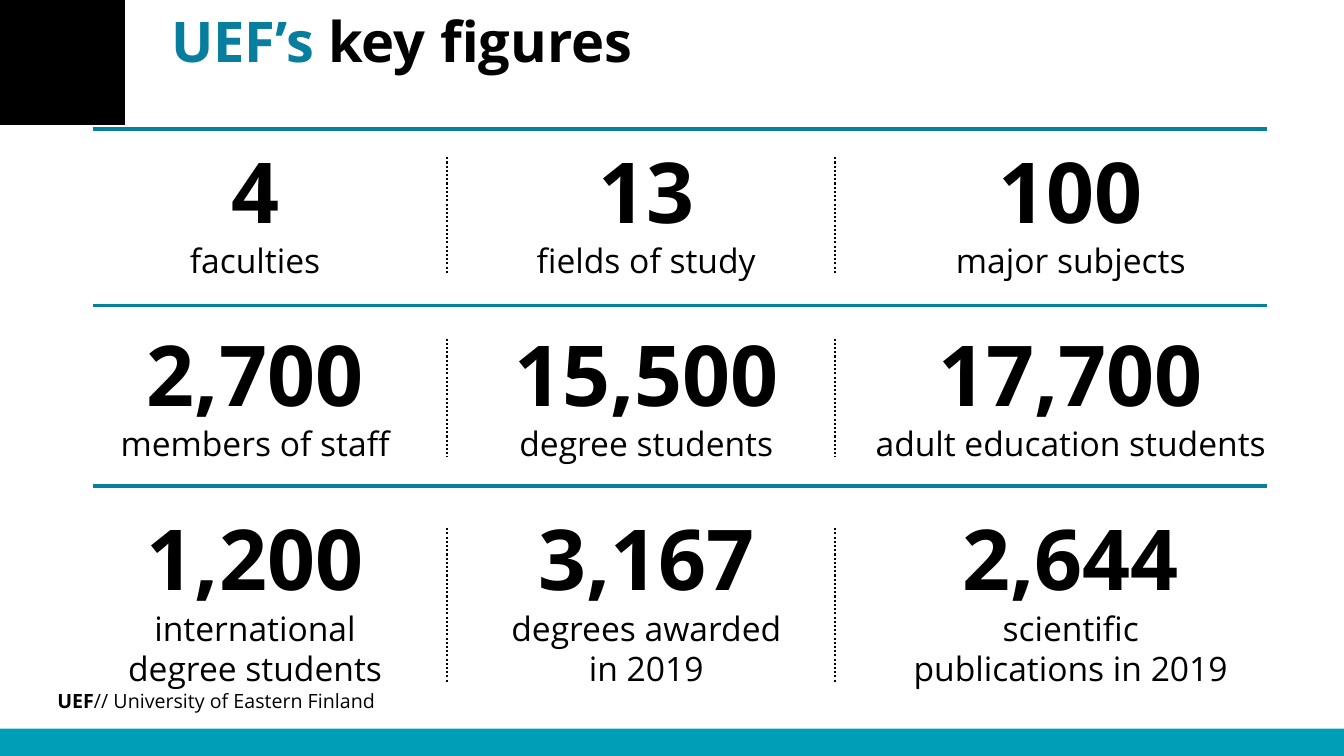
import pptx
import pptx.util
import pptx.dml.color
import pptx.enum.dml
import pptx.enum.shapes
import pptx.enum.text
import pptx.oxml.ns
import lxml.etree

Inches = pptx.util.Inches
ALIGN = pptx.enum.text.PP_ALIGN
ANCHOR = pptx.enum.text.MSO_ANCHOR

# Content: each figure is number, label lines, box width
ROWS = [
    [("4", ["faculties"], 2.06),
     ("13", ["fields of study"], 2.5),
     ("100", ["major subjects"], 2.5)],
    [("2,700", ["members of staff"], 3.01),
     ("15,500", ["degree students"], 3.28),
     ("17,700", ["adult education students"], 4.18)],
    [("1,200", ["international", "degree students"], 3.21),
     ("3,167", ["degrees awarded", "in 2019"], 3.21),
     ("2,644", ["scientific", "publications in 2019"], 4.16)],
]
TITLE = [("UEF’s ", "accent"), ("key figures", "ink")]
# Footer runs: text, bold, letter spacing in hundredths of a point
FOOTER = [("UEF", True, 0), ("/", False, -150),
          ("/ University of Eastern Finland", False, 0)]

THEME = {
    "font": "Open Sans",
    "ink": "000000", "accent": "077E9E", "band": "009FB8",
    "title": 40, "title_line": 40.8, "number": 60, "label": 24, "footer": 14,
    "rule": 2.5, "divider": 1.5,
}

# Grid
COLUMN_CENTERS = [2.53, 6.41, 10.62]
ROW_TOPS = [1.33, 3.15, 4.98]
ROW_HEIGHTS = [1.51, 1.51, 1.92]
RULES = [1.28, 3.03, 4.82]
RULE_LEFT, RULE_RIGHT = 0.92, 12.57
DIVIDERS_X = [4.43, 8.28]
DIVIDER_SPANS = [(1.56, 2.72), (3.36, 4.53), (5.24, 6.78)]

deck = pptx.Presentation()
deck.slide_width, deck.slide_height = Inches(13.33), Inches(7.5)
page = deck.slides.add_slide(deck.slide_layouts[6])


def color(name):
    return pptx.dml.color.RGBColor.from_string(THEME[name])


def add_block(left, top, width, height, fill):
    block = page.shapes.add_shape(
        pptx.enum.shapes.MSO_SHAPE.RECTANGLE,
        Inches(left), Inches(top), Inches(width), Inches(height))
    block.shadow.inherit = False
    block.fill.solid()
    block.fill.fore_color.rgb = color(fill)
    block.line.fill.background()


def add_box(left, top, width, height, anchor=ANCHOR.TOP):
    box = page.shapes.add_textbox(
        Inches(left), Inches(top), Inches(width), Inches(height))
    box.text_frame.word_wrap = True
    box.text_frame.vertical_anchor = anchor
    return box.text_frame


def add_span(para, text, size, bold, ink="ink"):
    span = para.add_run()
    span.text = text
    span.font.name = THEME["font"]
    span.font.size = pptx.util.Pt(THEME[size])
    span.font.bold = bold
    span.font.color.rgb = color(ink)
    return span


def add_line(x1, y1, x2, y2, kind, ink):
    line = page.shapes.add_connector(
        pptx.enum.shapes.MSO_CONNECTOR.STRAIGHT,
        Inches(x1), Inches(y1), Inches(x2), Inches(y2))
    line.line.color.rgb = color(ink)
    line.line.width = pptx.util.Pt(THEME[kind])
    if kind == "divider":
        line.line.dash_style = pptx.enum.dml.MSO_LINE.ROUND_DOT
    lxml.etree.SubElement(line._element.spPr, pptx.oxml.ns.qn("a:effectLst"))


# Footer text
para = add_box(0.47, 6.8, 5.14, 0.31, ANCHOR.MIDDLE).paragraphs[0]
for text, bold, spacing in FOOTER:
    span = add_span(para, text, "footer", bold)
    if spacing:
        span._r.get_or_add_rPr().set("spc", str(spacing))

# Corner square and title
add_block(0, 0, 1.24, 1.24, "ink")
para = add_box(1.6, 0.12, 10.82, 1.45).paragraphs[0]
para.line_spacing = pptx.util.Pt(THEME["title_line"])
for text, ink in TITLE:
    add_span(para, text, "title", True, ink)

# Figures, with a rule above each row
for row, top, height, rule in zip(ROWS, ROW_TOPS, ROW_HEIGHTS, RULES):
    add_line(RULE_LEFT, rule, RULE_RIGHT, rule, "rule", "accent")
    for (number, labels, width), center in zip(row, COLUMN_CENTERS):
        frame = add_box(center - width / 2, top, width, height)
        frame.auto_size = pptx.enum.text.MSO_AUTO_SIZE.SHAPE_TO_FIT_TEXT
        para = frame.paragraphs[0]
        para.alignment = ALIGN.CENTER
        add_span(para, number, "number", True)
        for label in labels:
            para = frame.add_paragraph()
            para.alignment = ALIGN.CENTER
            add_span(para, label, "label", False)

# Dotted dividers between columns
for x in DIVIDERS_X:
    for start, end in DIVIDER_SPANS:
        add_line(x, start, x, end, "divider", "ink")

# Bottom band
add_block(0, 7.23, 13.33, 0.27, "band")

deck.save("out.pptx")
